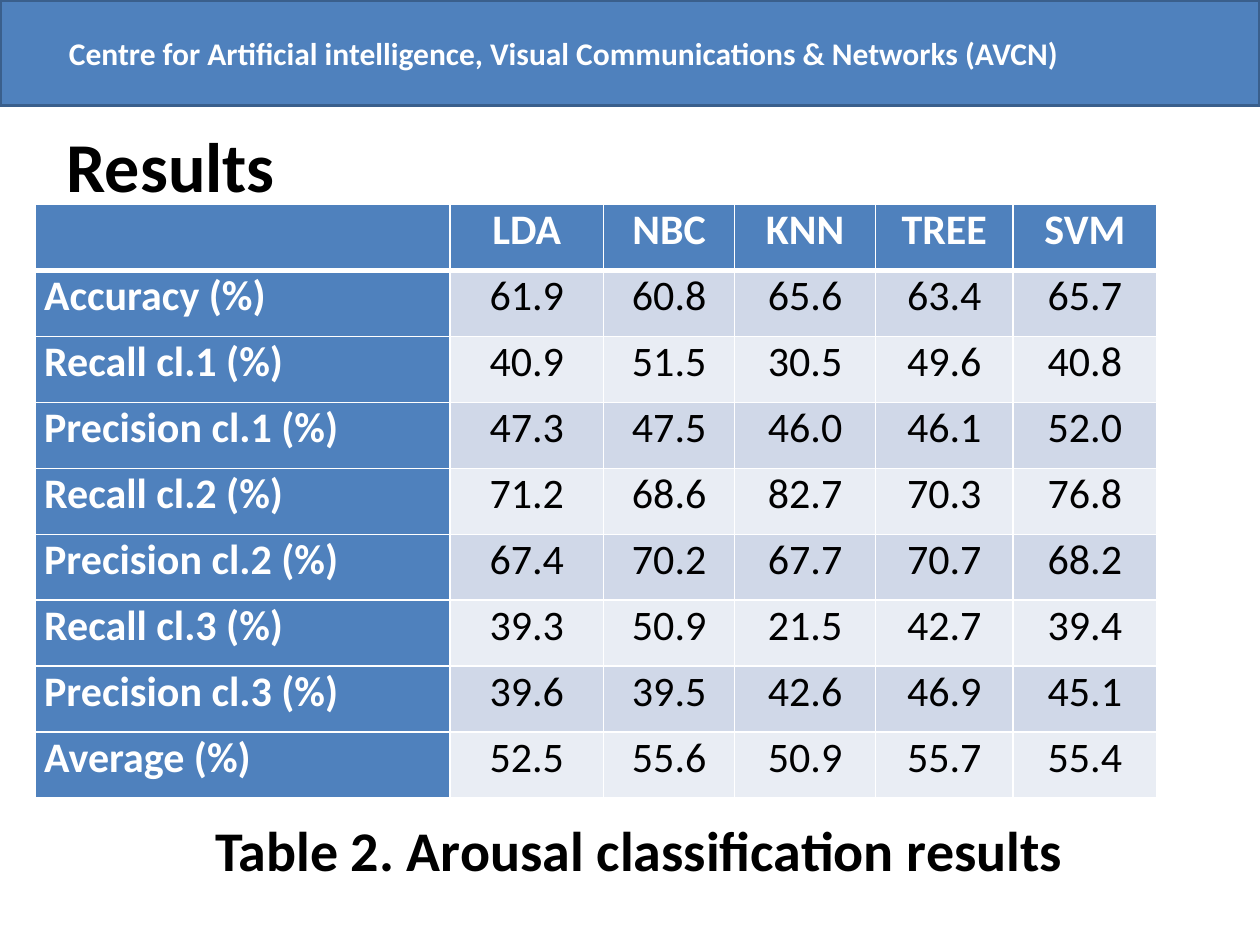
from lxml.etree import SubElement
from pptx import Presentation
from pptx.dml.color import RGBColor
from pptx.enum.shapes import MSO_SHAPE
from pptx.enum.text import MSO_ANCHOR, MSO_AUTO_SIZE, PP_ALIGN
from pptx.oxml.ns import qn
from pptx.util import Cm, Pt

BLUE = RGBColor(0x4F, 0x81, 0xBD)
DARK_BLUE = RGBColor(0x3A, 0x5F, 0x8C)
BAND_DARK = RGBColor(0xD0, 0xD8, 0xE8)
BAND_LIGHT = RGBColor(0xE9, 0xED, 0xF4)
WHITE = RGBColor(0xFF, 0xFF, 0xFF)
BLACK = RGBColor(0, 0, 0)


def write_text(text_frame, text, size, color, bold=True, alignment=PP_ALIGN.LEFT):
    paragraph = text_frame.paragraphs[0]
    paragraph.text = text
    paragraph.alignment = alignment
    font = paragraph.runs[0].font
    font.color.rgb = color
    for name, value in {"name": "Calibri", "size": Pt(size), "bold": bold}.items():
        setattr(font, name, value)


def set_borders(cell, widths):
    properties = cell._tc.get_or_add_tcPr()
    for position, (side, width) in enumerate(widths.items()):
        line = SubElement(properties, qn(f"a:ln{side}"), w=str(Pt(width)))
        fill = SubElement(line, qn("a:solidFill"))
        SubElement(fill, qn("a:srgbClr"), val=str(WHITE))
        properties.insert(position, line)


presentation = Presentation()
presentation.slide_width = Cm(25.4)
presentation.slide_height = Cm(19.05)
slide = presentation.slides.add_slide(presentation.slide_layouts[5])

# Header band
header = slide.shapes.add_shape(MSO_SHAPE.RECTANGLE, 0, 0, Cm(25.4), Cm(2.13))
header.shadow.inherit = False
header.fill.solid()
header.fill.fore_color.rgb = BLUE
header.line.color.rgb = DARK_BLUE
header.line.width = Pt(2)
header.text_frame.margin_left = Cm(1.39)
header.text_frame.vertical_anchor = MSO_ANCHOR.MIDDLE
write_text(header.text_frame,
           "Centre for Artificial intelligence, Visual Communications & Networks (AVCN)",
           18, WHITE)

# Title
title = slide.shapes.title
title_format = {"left": Cm(1.09), "top": Cm(2.34), "width": Cm(24), "height": Cm(1.96)}
for name, value in title_format.items():
    setattr(title, name, value)
title.text_frame.vertical_anchor = MSO_ANCHOR.TOP
title.text_frame.auto_size = MSO_AUTO_SIZE.NONE
write_text(title.text_frame, "Results", 40, BLACK)

# Caption
caption = slide.shapes.add_textbox(Cm(4.09), Cm(16.31), Cm(17.75), Cm(1.63))
caption.text_frame.word_wrap = False
write_text(caption.text_frame, "Table 2. Arousal classification results", 32, BLACK)

# Results table
table_rows = [
    ("", "LDA", "NBC", "KNN", "TREE", "SVM"),
    ("Accuracy (%)", "61.9", "60.8", "65.6", "63.4", "65.7"),
    ("Recall cl.1 (%)", "40.9", "51.5", "30.5", "49.6", "40.8"),
    ("Precision cl.1 (%)", "47.3", "47.5", "46.0", "46.1", "52.0"),
    ("Recall cl.2 (%)", "71.2", "68.6", "82.7", "70.3", "76.8"),
    ("Precision cl.2 (%)", "67.4", "70.2", "67.7", "70.7", "68.2"),
    ("Recall cl.3 (%)", "39.3", "50.9", "21.5", "42.7", "39.4"),
    ("Precision cl.3 (%)", "39.6", "39.5", "42.6", "46.9", "45.1"),
    ("Average (%)", "52.5", "55.6", "50.9", "55.7", "55.4"),
]
column_widths = [8.36, 3.1, 2.64, 2.84, 2.77, 2.9]
row_height = 1.33
table = slide.shapes.add_table(
    len(table_rows), len(column_widths), Cm(0.71), Cm(4.12),
    Cm(sum(column_widths)), Cm(row_height * len(table_rows))).table
table.first_col = True
for column, width in zip(table.columns, column_widths):
    column.width = Cm(width)

cell_margins = {"margin_left": Cm(0.18), "margin_right": Cm(0.18),
                "margin_top": 0, "margin_bottom": 0}
for row_index, values in enumerate(table_rows):
    table.rows[row_index].height = Cm(row_height)
    band = BAND_DARK if row_index % 2 else BAND_LIGHT
    for column_index, value in enumerate(values):
        cell = table.cell(row_index, column_index)
        is_heading = row_index == 0 or column_index == 0
        for name, margin in cell_margins.items():
            setattr(cell, name, margin)
        cell.fill.solid()
        cell.fill.fore_color.rgb = BLUE if is_heading else band
        set_borders(cell, {"L": 1, "R": 1, "T": 3 if row_index == 1 else 1,
                           "B": 3 if row_index == 0 else 1})
        if value:
            write_text(cell.text_frame, value, 24, WHITE if is_heading else BLACK,
                       is_heading, PP_ALIGN.CENTER if column_index else PP_ALIGN.LEFT)

presentation.save("out.pptx")
